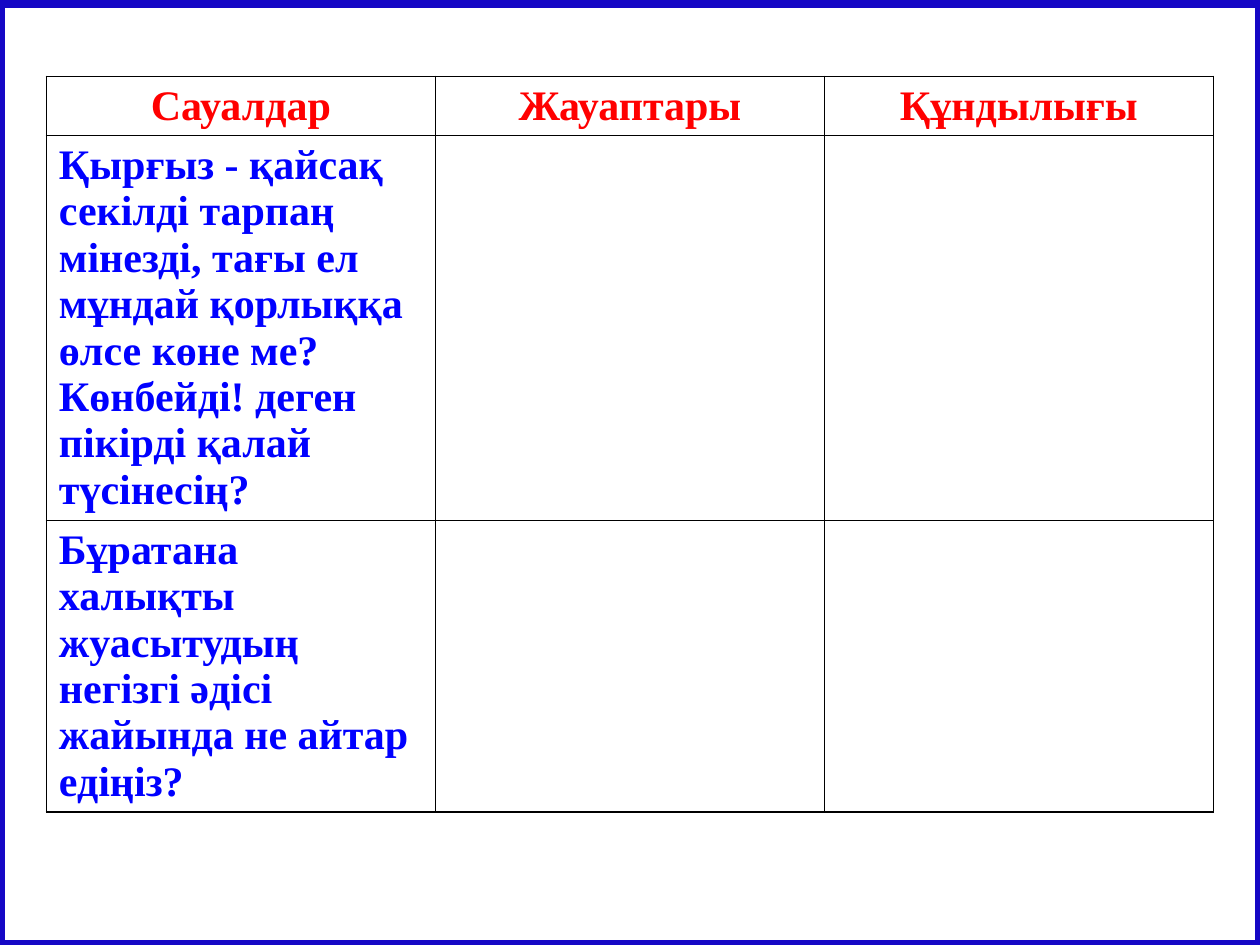
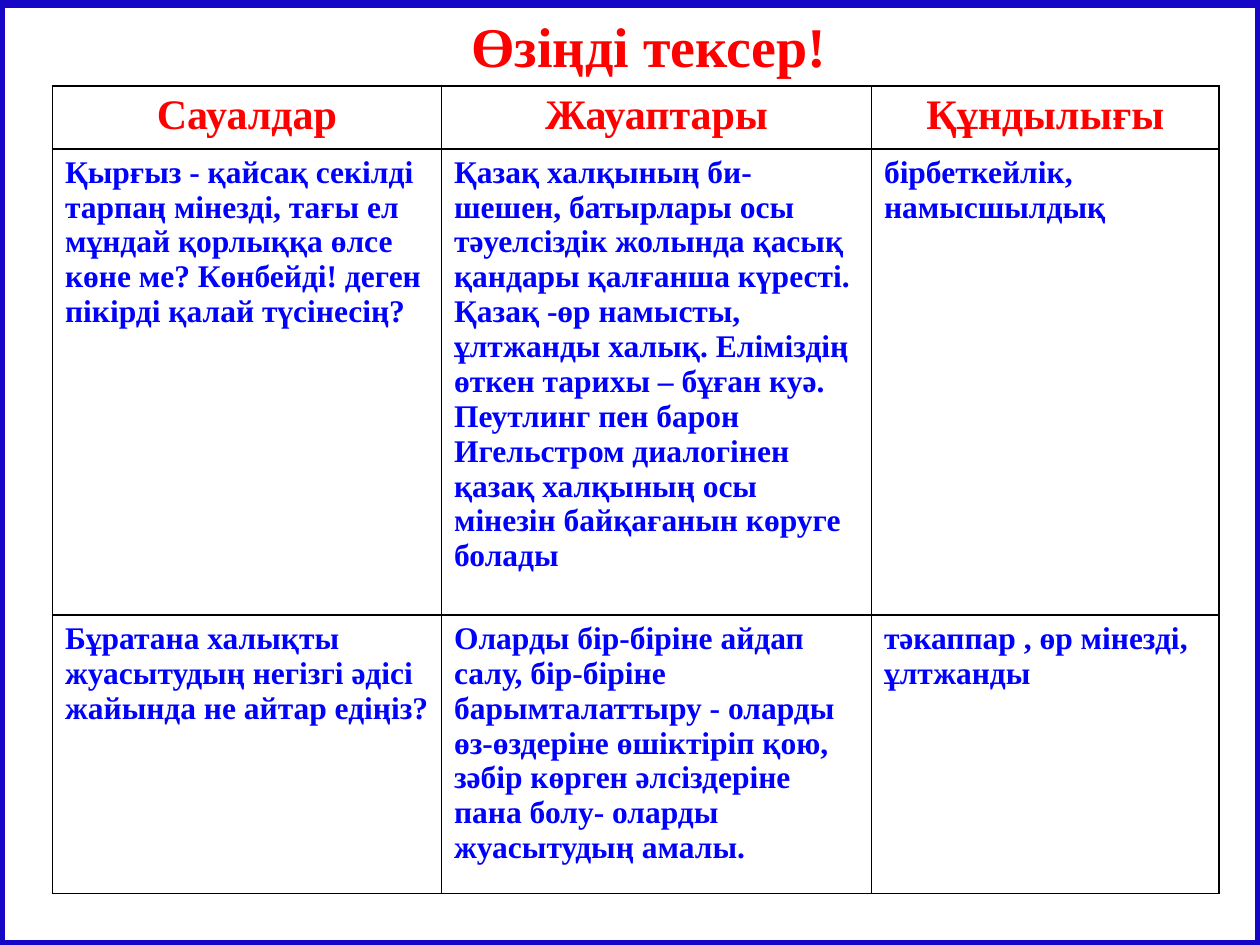
from lxml import etree
from pptx import Presentation
from pptx.dml.color import RGBColor
from pptx.enum.shapes import MSO_SHAPE
from pptx.enum.text import PP_ALIGN
from pptx.oxml.ns import qn
from pptx.util import Pt

RECTANGLE = MSO_SHAPE.RECTANGLE
CENTER, LEFT = PP_ALIGN.CENTER, PP_ALIGN.LEFT

FONT = "Times New Roman"
RED, BLUE, BLACK, WHITE, FRAME = "FF0000", "0000FF", "000000", "FFFFFF", "1507C5"
SLIDE_WIDTH, SLIDE_HEIGHT = 720, 540
HEADING_SIZE = 24

HEADINGS = ["Сауалдар", "Жауаптары", "Құндылығы"]
QUESTIONS = [
    "Қырғыз - қайсақ секілді тарпаң мінезді, тағы ел мұндай қорлыққа өлсе "
    "көне ме? Көнбейді! деген пікірді қалай түсінесің?",
    "Бұратана халықты жуасытудың негізгі әдісі жайында не айтар едіңіз?",
]
ANSWERS = [
    "Қазақ халқының би-шешен, батырлары осы тәуелсіздік жолында қасық қандары "
    "қалғанша күресті. Қазақ -өр намысты, ұлтжанды халық. Еліміздің өткен "
    "тарихы – бұған куә. Пеутлинг пен барон Игельстром диалогінен қазақ "
    "халқының осы мінезін байқағанын көруге болады",
    "Оларды бір-біріне айдап салу, бір-біріне барымталаттыру - оларды "
    "өз-өздеріне өшіктіріп қою, зәбір көрген әлсіздеріне пана болу- оларды "
    "жуасытудың амалы.",
]
VALUES = ["бірбеткейлік, намысшылдық", "тәкаппар , өр мінезді, ұлтжанды"]


def color(value):
    return RGBColor.from_string(value)


def write(text_frame, text, size, ink, align):
    paragraph = text_frame.paragraphs[0]
    paragraph.text = text
    paragraph.alignment = align
    font = paragraph.font
    font.name, font.size, font.bold = FONT, Pt(size), True
    font.color.rgb = color(ink)


def add_framed_slide(deck):
    slide = deck.slides.add_slide(deck.slide_layouts[6])
    top = 1.5
    frame = slide.shapes.add_shape(
        RECTANGLE, 0, Pt(top), Pt(SLIDE_WIDTH), Pt(SLIDE_HEIGHT - top))
    frame.shadow.inherit = False
    frame.fill.solid()
    frame.fill.fore_color.rgb = color(WHITE)
    frame.line.color.rgb = color(FRAME)
    frame.line.width = Pt(6)
    return slide


def add_title(slide, text, left, top, width, height):
    box = slide.shapes.add_textbox(Pt(left), Pt(top), Pt(width), Pt(height))
    box.text_frame.word_wrap = True
    box.text_frame.margin_left = Pt(29)
    write(box.text_frame, text, 32, RED, CENTER)


def outline_cell(cell):
    properties = cell._tc.get_or_add_tcPr()
    for side in ("a:lnL", "a:lnR", "a:lnT", "a:lnB"):
        line = etree.SubElement(properties, qn(side), w=str(Pt(1)))
        fill = etree.SubElement(line, qn("a:solidFill"))
        etree.SubElement(fill, qn("a:srgbClr"), val=BLACK)
    cell.fill.background()


def add_question_table(slide, left, top, widths, heights, answers, values, size):
    rows = [HEADINGS, *zip(QUESTIONS, answers, values)]
    table = slide.shapes.add_table(
        len(rows), len(widths), Pt(left), Pt(top),
        Pt(sum(widths)), Pt(sum(heights))).table
    for column, width in zip(table.columns, widths):
        column.width = Pt(width)
    for r, (row, height) in enumerate(zip(rows, heights)):
        table.rows[r].height = Pt(height)
        style = (HEADING_SIZE, RED, CENTER) if r == 0 else (size, BLUE, LEFT)
        for c, text in enumerate(row):
            cell = table.cell(r, c)
            outline_cell(cell)
            if text:
                write(cell.text_frame, text, *style)


def add_blank_questions(deck):
    slide = add_framed_slide(deck)
    blank = [""] * len(QUESTIONS)
    add_question_table(slide, 26.5, 43.7, [222.3] * 3, [33.7, 220, 166],
                       blank, blank, HEADING_SIZE)


def add_checked_answers(deck):
    slide = add_framed_slide(deck)
    left, top, title_height = 30, 3, 46
    add_title(slide, "Өзіңді тексер!", left, top, 660, title_height)
    add_question_table(slide, left, top + title_height, [222.3, 245.7, 198.7],
                       [36, 266, 159], ANSWERS, VALUES, 18)


def main():
    deck = Presentation()
    deck.slide_width, deck.slide_height = Pt(SLIDE_WIDTH), Pt(SLIDE_HEIGHT)
    add_blank_questions(deck)
    add_checked_answers(deck)
    deck.save("out.pptx")


if __name__ == "__main__":
    main()
